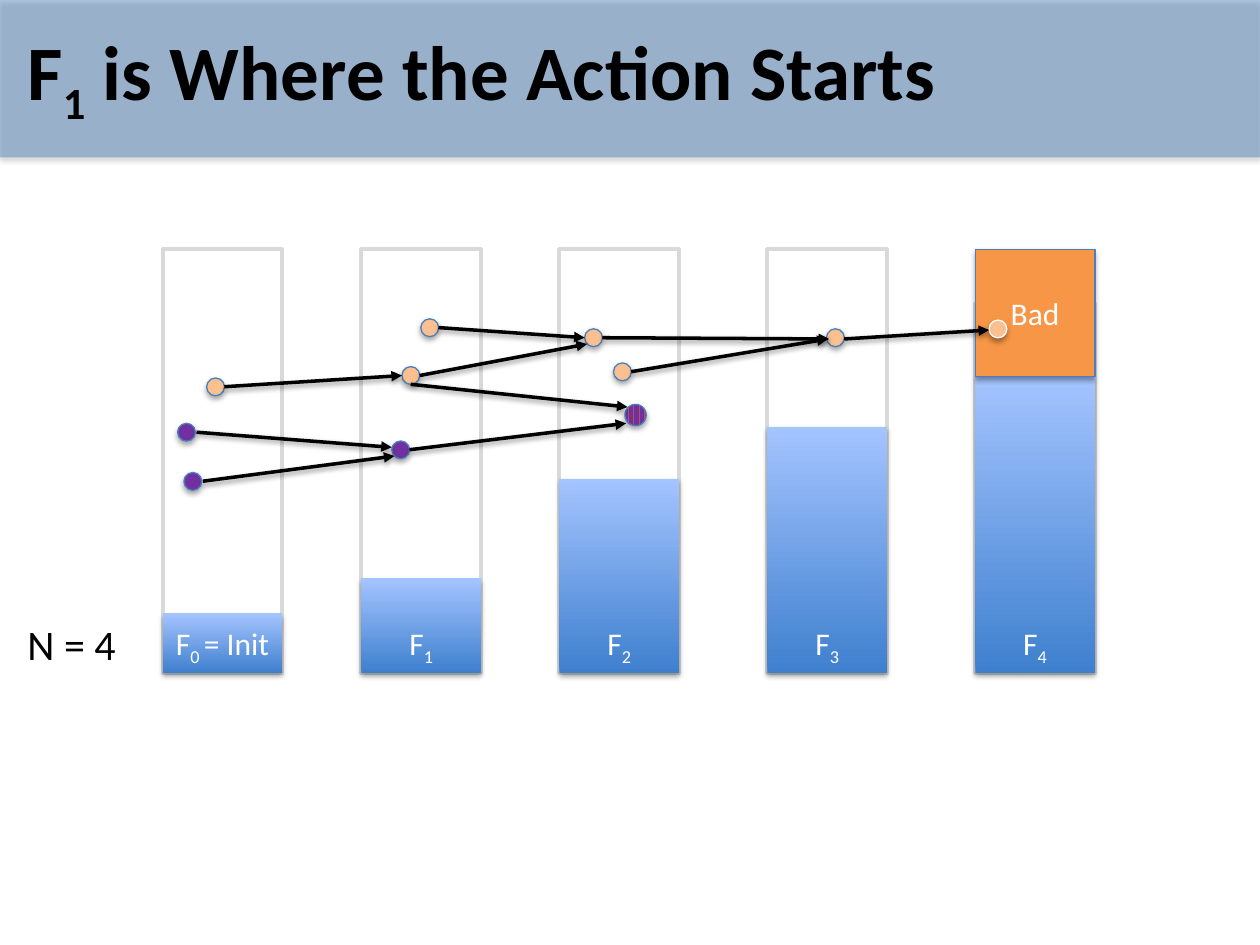
from lxml import etree
from pptx import Presentation
from pptx.dml.color import RGBColor
from pptx.enum.dml import MSO_PATTERN
from pptx.enum.shapes import MSO_CONNECTOR, MSO_SHAPE
from pptx.enum.text import MSO_ANCHOR, PP_ALIGN
from pptx.oxml import parse_xml
from pptx.oxml.ns import nsdecls, qn
from pptx.util import Pt

C = {name: RGBColor.from_string(value) for name, value in {
    "header": "4F81BD", "frame": "D9D9D9", "bar_low": "3F80CE",
    "bar_high": "A4C4FF", "bad": "F79646", "edge": "4B7EBC",
    "peach": "FAC090", "purple": "7030A0", "red": "C0504D",
    "white": "FFFFFF", "black": "000000",
}.items()}


def cast_shadow(shape, alpha=35, dist=1.8):
    shape.element.spPr.append(parse_xml(
        f'<a:effectLst {nsdecls("a")}><a:outerShdw blurRad="{Pt(3.1)}" '
        f'dist="{Pt(dist)}" dir="5400000" rotWithShape="0">'
        f'<a:srgbClr val="000000"><a:alpha val="{alpha * 1000}"/></a:srgbClr>'
        '</a:outerShdw></a:effectLst>'))


def write(shape, parts, size, color, anchor, align=PP_ALIGN.LEFT, bold=False):
    tf = shape.text_frame
    tf.word_wrap = True
    tf.vertical_anchor = anchor
    p = tf.paragraphs[0]
    p.alignment = align
    for i, text in enumerate(parts):
        r = p.add_run()
        r.text = text
        r.font.name = "Calibri"
        r.font.size = Pt(size)
        r.font.bold = bold
        r.font.color.rgb = C[color]
        if i == 1:
            r.font._element.set("baseline", "-25000")


prs = Presentation()
prs.slide_width, prs.slide_height = Pt(720), Pt(540)
s = prs.slides.add_slide(prs.slide_layouts[6])

header = s.shapes.add_shape(MSO_SHAPE.RECTANGLE, 0, 0, Pt(720), Pt(90))
header.fill.solid()
header.fill.fore_color.rgb = C["header"]
color = header.element.spPr.find(".//" + qn("a:srgbClr"))
etree.SubElement(color, qn("a:alpha")).set("val", "45000")
header.line.fill.background()
cast_shadow(header)

title = s.shapes.add_textbox(Pt(8.64), Pt(-1.44), Pt(684), Pt(90))
write(title, ["F", "1", " is Where the Action Starts"], 44, "black", MSO_ANCHOR.MIDDLE, bold=True)

top, bottom, width = 142.5, 384.5, 68.4
columns = [
    (92.9, top, 350.6, ["F", "0 ", "= Init"]),
    (206.5, top, 330.5, ["F", "1"]),
    (319.7, top, 273.6, ["F", "2"]),
    (438.5, top, 244.1, ["F", "3"]),
    (557.3, 173.5, 215.3, ["F", "4"]),
]
for left, frame_top, bar_top, label in columns:
    frame = s.shapes.add_shape(MSO_SHAPE.RECTANGLE, Pt(left), Pt(frame_top), Pt(width), Pt(bottom - frame_top))
    frame.shadow.inherit = False
    frame.fill.background()
    frame.line.color.rgb = C["frame"]
    frame.line.width = Pt(2.25)

for left, frame_top, bar_top, label in columns:
    bar = s.shapes.add_shape(MSO_SHAPE.RECTANGLE, Pt(left), Pt(bar_top), Pt(width), Pt(bottom - bar_top))
    bar.fill.gradient()
    bar.fill.gradient_angle = 90
    for stop, name in zip(bar.fill.gradient_stops, ("bar_low", "bar_high")):
        stop.color.rgb = C[name]
    bar.line.fill.background()
    cast_shadow(bar)
    write(bar, label, 18, "white", MSO_ANCHOR.BOTTOM, PP_ALIGN.CENTER)

bad = s.shapes.add_shape(MSO_SHAPE.RECTANGLE, Pt(557.3), Pt(top), Pt(width), Pt(72.8))
bad.fill.solid()
bad.fill.fore_color.rgb = C["bad"]
bad.line.color.rgb = C["edge"]
bad.line.width = Pt(0.75)
cast_shadow(bad)
write(bad, ["Bad"], 18, "white", MSO_ANCHOR.MIDDLE, PP_ALIGN.CENTER)

bound = s.shapes.add_textbox(Pt(8.64), Pt(350), Pt(79.2), Pt(36))
write(bound, ["N = 4"], 24, "black", MSO_ANCHOR.TOP)

traces = [
    ("peach", 10.2,
     [(472.3, 187.9, "edge"), (565.2, 182.9, "white"), (350.6, 207.4, "edge"),
      (334.1, 187.9, "edge"), (229.7, 209.5, "edge"), (118.1, 216, "edge"),
      (240.5, 182.2, "edge")],
     [(482.4, 193.7, 565.2, 188.6), (360.7, 212.4, 473, 193.7),
      (128.2, 221, 229.7, 214.6), (239.8, 214.6, 335.5, 196.6),
      (344.2, 193, 473.8, 193.7), (250.6, 187.2, 334.1, 193)]),
    ("purple", 10.2,
     [(223.9, 252, "edge"), (101.5, 241.9, "edge"), (105.1, 270, "edge")],
     [(112.3, 247, 223.9, 255.6), (115.9, 275, 225.4, 260.6)]),
    ("striped", 12.2,
     [(357.1, 231.1, "edge")],
     [(234.7, 219.6, 358.6, 232.6), (234, 257, 357.8, 241.9)]),
]
for kind, size, states, steps in traces:
    group = s.shapes.add_group_shape()
    for x, y, edge in states:
        dot = group.shapes.add_shape(MSO_SHAPE.OVAL, Pt(x), Pt(y), Pt(size), Pt(size))
        if kind == "striped":
            dot.fill.patterned()
            dot.fill.pattern = MSO_PATTERN.DARK_VERTICAL
            dot.fill.fore_color.rgb = C["purple"]
            dot.fill.back_color.rgb = C["red"]
        else:
            dot.fill.solid()
            dot.fill.fore_color.rgb = C[kind]
        dot.line.color.rgb = C[edge]
        dot.line.width = Pt(0.75)
        cast_shadow(dot)
    for step in steps:
        arrow = group.shapes.add_connector(MSO_CONNECTOR.STRAIGHT, *map(Pt, step))
        arrow.line.color.rgb = C["black"]
        arrow.line.width = Pt(2)
        ln = arrow.element.spPr.find(qn("a:ln"))
        etree.SubElement(ln, qn("a:tailEnd")).set("type", "triangle")
        cast_shadow(arrow, 38, 1.6)

prs.save("out.pptx")
